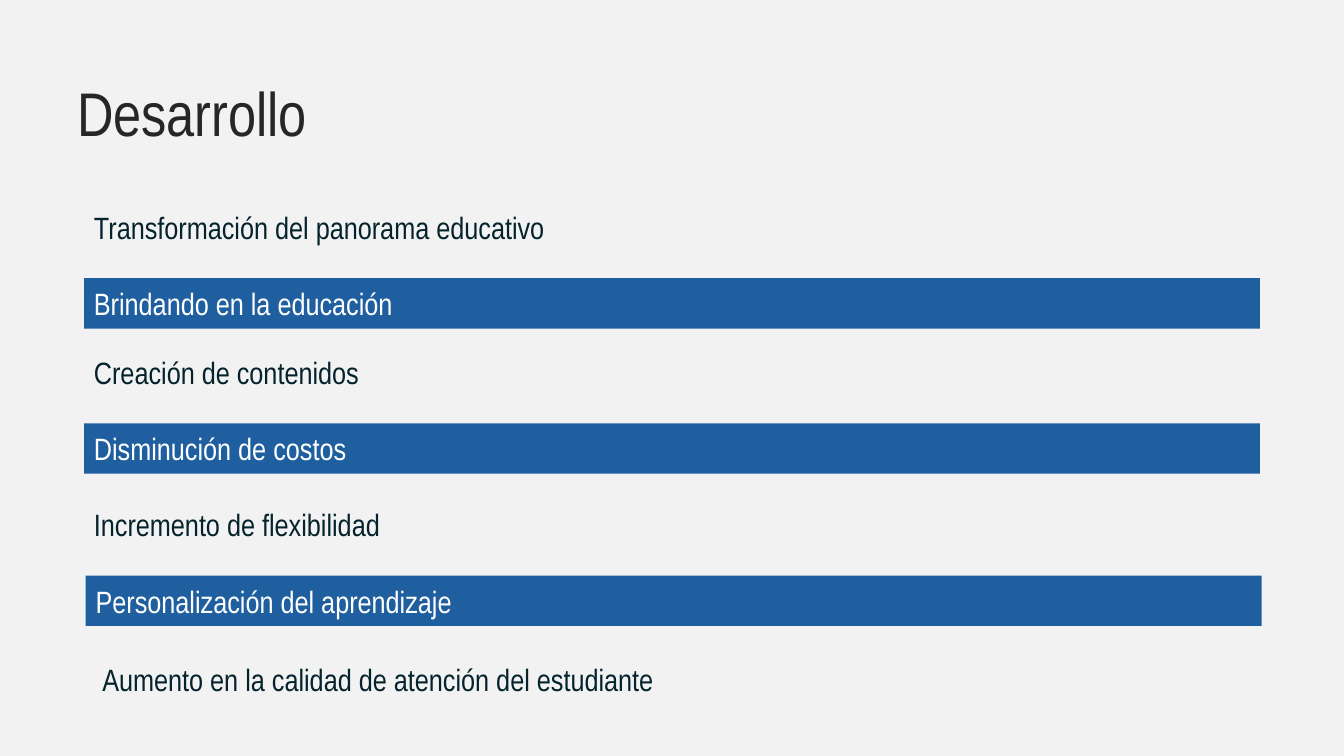
from pptx import Presentation
from pptx.dml.color import RGBColor
from pptx.enum.shapes import MSO_SHAPE
from pptx.enum.text import MSO_ANCHOR, PP_ALIGN
from pptx.util import Pt

RECTANGLE = MSO_SHAPE.RECTANGLE
LEFT = PP_ALIGN.LEFT
MIDDLE, TOP = MSO_ANCHOR.MIDDLE, MSO_ANCHOR.TOP

COLORS = {
    "background": "F2F2F2",
    "title": "262626",
    "topic": "05232C",
    "bar": "1F5FA0",
    "bar_text": "FFFFFF",
}
FONT = "Arial Narrow"
ROW_WIDTH, ROW_HEIGHT = 840, 36
BAR_OFFSET = 54.7  # from the top of a plain topic to the top of its bar

# Left and top of each pair, then the plain topic and the bar topic
TOPIC_PAIRS = [
    (60, 60, 144, "Transformación del panorama educativo", "Brindando en la educación"),
    (60, 60, 247.7, "Creación de contenidos", "Disminución de costos"),
    (60, 61.2, 356.4, "Incremento de flexibilidad", "Personalización del aprendizaje"),
]


def color(name):
    return RGBColor.from_string(COLORS[name])


def write(holder, words, size, color_name, anchor=MIDDLE, spacing=1.0):
    frame = holder.text_frame
    frame.word_wrap = True
    frame.vertical_anchor = anchor
    line = frame.paragraphs[0]
    line.alignment = LEFT
    line.line_spacing = spacing
    run = line.add_run()
    run.text = words
    for attribute, value in {"name": FONT, "size": Pt(size)}.items():
        setattr(run.font, attribute, value)
    run.font.color.rgb = color(color_name)


def add_title(slide, box, words):
    title = slide.shapes.add_textbox(*map(Pt, box))
    write(title, words, 44, "title")


def add_topic(slide, box, words, **layout):
    topic = slide.shapes.add_textbox(*map(Pt, box))
    write(topic, words, 22, "topic", **layout)


def add_bar(slide, box, words):
    bar = slide.shapes.add_shape(RECTANGLE, *map(Pt, box))
    bar.shadow.inherit = False
    bar.fill.solid()
    bar.fill.fore_color.rgb = color("bar")
    bar.line.fill.background()
    write(bar, words, 22, "bar_text")


def build_development_slide(presentation):
    slide = presentation.slides.add_slide(presentation.slide_layouts[6])
    slide.background.fill.solid()
    slide.background.fill.fore_color.rgb = color("background")

    # Title
    add_title(slide, (48, 46, 800, 68), "Desarrollo")

    # Plain topics, each followed by a topic on a bar
    for topic_left, bar_left, top, topic, bar_topic in TOPIC_PAIRS:
        add_topic(slide, (topic_left, top, ROW_WIDTH, ROW_HEIGHT), topic)
        add_bar(slide, (bar_left, top + BAR_OFFSET, ROW_WIDTH, ROW_HEIGHT), bar_topic)

    # Closing topic
    add_topic(slide, (66, 465.8, ROW_WIDTH, 31),
              "Aumento en la calidad de atención del estudiante",
              anchor=TOP, spacing=1.1)


def main():
    presentation = Presentation()
    presentation.slide_width = Pt(960)
    presentation.slide_height = Pt(540)
    build_development_slide(presentation)
    presentation.save("out.pptx")


if __name__ == "__main__":
    main()
